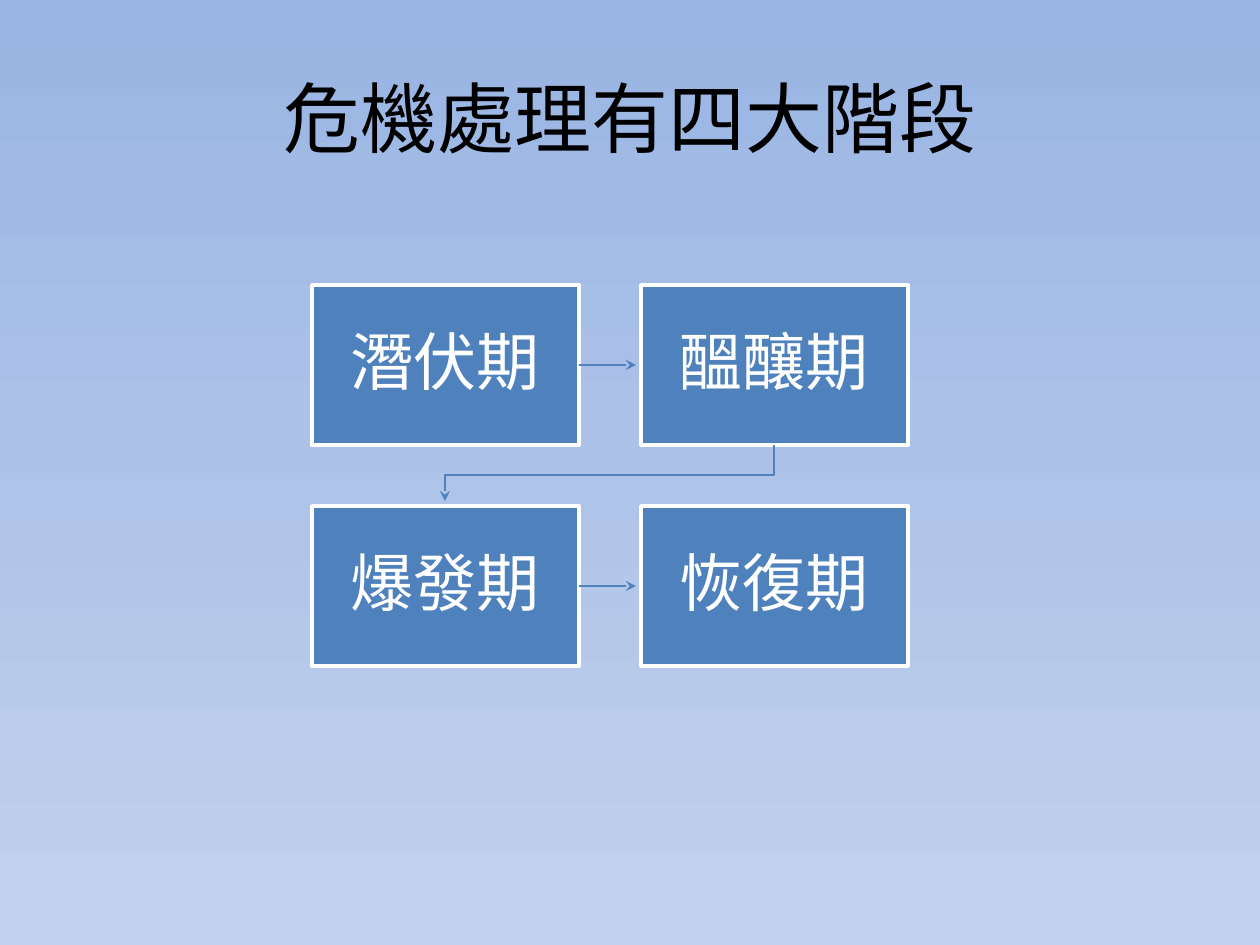
from dataclasses import dataclass

from lxml import etree
from pptx import Presentation
from pptx import util as u
from pptx.dml.color import RGBColor
from pptx.enum import shapes, text
from pptx.oxml.ns import qn

PX = 914400 / 126  # EMU per px
BLUE, WHITE, BLACK = "4F81BD", "FFFFFF", "000000"
LEFT, TOP = 312, 285
WIDE, HIGH = 267, 160
STEP_X, STEP_Y = 329, 221
TIP = 5  # space between arrow tip and box


@dataclass
class Stage:
    name: str
    col: int
    row: int

    @property
    def left(self) -> int:
        return LEFT + self.col * STEP_X

    @property
    def top(self) -> int:
        return TOP + self.row * STEP_Y

    @property
    def mid(self) -> tuple[int, int]:
        return self.left + WIDE // 2, self.top + HIGH // 2


def px(n: float) -> u.Emu:
    return u.Emu(round(n * PX))


def color(code: str) -> RGBColor:
    return RGBColor.from_string(code)


def put(thing, form: dict) -> None:
    for key, val in form.items():
        setattr(thing, key, val)


def style(para, face: str, size: int, code: str) -> None:
    para.alignment = text.PP_ALIGN.CENTER
    put(para.font, {"name": face, "size": u.Pt(size)})
    para.font.color.rgb = color(code)


def draw_box(slide, stage: Stage):
    box = slide.shapes.add_shape(
        shapes.MSO_SHAPE.RECTANGLE,
        px(stage.left), px(stage.top), px(WIDE), px(HIGH))
    box.shadow.inherit = False
    box.fill.solid()
    box.fill.fore_color.rgb = color(BLUE)
    box.line.color.rgb = color(WHITE)
    box.line.width = u.Pt(2)
    frame = box.text_frame
    sides = ("left", "top", "right", "bottom")
    put(frame, {f"margin_{side}": px(35) for side in sides})
    put(frame, {"word_wrap": True, "vertical_anchor": text.MSO_ANCHOR.MIDDLE})
    para = frame.paragraphs[0]
    para.text = stage.name
    para.line_spacing = 0.9
    style(para, "Calibri", 36, WHITE)
    return box


def add_head(line) -> None:
    line.color.rgb = color(BLUE)
    line.width = u.Pt(0.75)
    etree.SubElement(line._get_or_add_ln(), qn("a:tailEnd"), type="stealth")


def draw_arrow(slide, box, start: Stage, end: Stage) -> None:
    y = px(start.mid[1])
    arrow = slide.shapes.add_connector(
        shapes.MSO_CONNECTOR.STRAIGHT,
        px(start.left + WIDE), y, px(end.left - TIP), y)
    arrow.begin_connect(box, 3)
    add_head(arrow.line)
    etree.SubElement(arrow._element.spPr, qn("a:effectLst"))


def draw_turn(slide, start: Stage, end: Stage) -> None:
    x, goal = start.mid[0], end.mid[0]
    low = start.top + HIGH
    bend = (low + end.top) // 2
    path = slide.shapes.build_freeform(x, low, scale=PX)
    path.add_line_segments(
        [(x, bend), (goal, bend), (goal, end.top - TIP)], close=False)
    turn = path.convert_to_shape()
    turn.fill.background()
    add_head(turn.line)
    turn.shadow.inherit = False


def main() -> None:
    deck = Presentation()
    put(deck, {"slide_width": px(1260), "slide_height": px(945)})
    slide = deck.slides.add_slide(deck.slide_layouts[5])

    # Background
    fill = slide.background.fill
    fill.gradient()
    fill.gradient_angle = 270
    for stop, code in zip(fill.gradient_stops, ("9AB5E4", "C2D1ED")):
        stop.color.rgb = color(code)

    # Title
    title = slide.shapes.title
    put(title, {"left": px(63), "top": px(38),
                "width": px(1134), "height": px(158)})
    title.text_frame.text = "危機處理有四大階段"
    title.text_frame.vertical_anchor = text.MSO_ANCHOR.MIDDLE
    style(title.text_frame.paragraphs[0], "Arial", 44, BLACK)

    # Stages, two to a row
    names = ("潛伏期", "醞釀期", "爆發期", "恢復期")
    stages = [Stage(name, i % 2, i // 2) for i, name in enumerate(names)]
    boxes = [draw_box(slide, stage) for stage in stages]

    # Flow from stage to stage
    for box, start, end in zip(boxes, stages, stages[1:]):
        if start.row == end.row:
            draw_arrow(slide, box, start, end)
        else:
            draw_turn(slide, start, end)

    deck.save("out.pptx")


if __name__ == "__main__":
    main()
